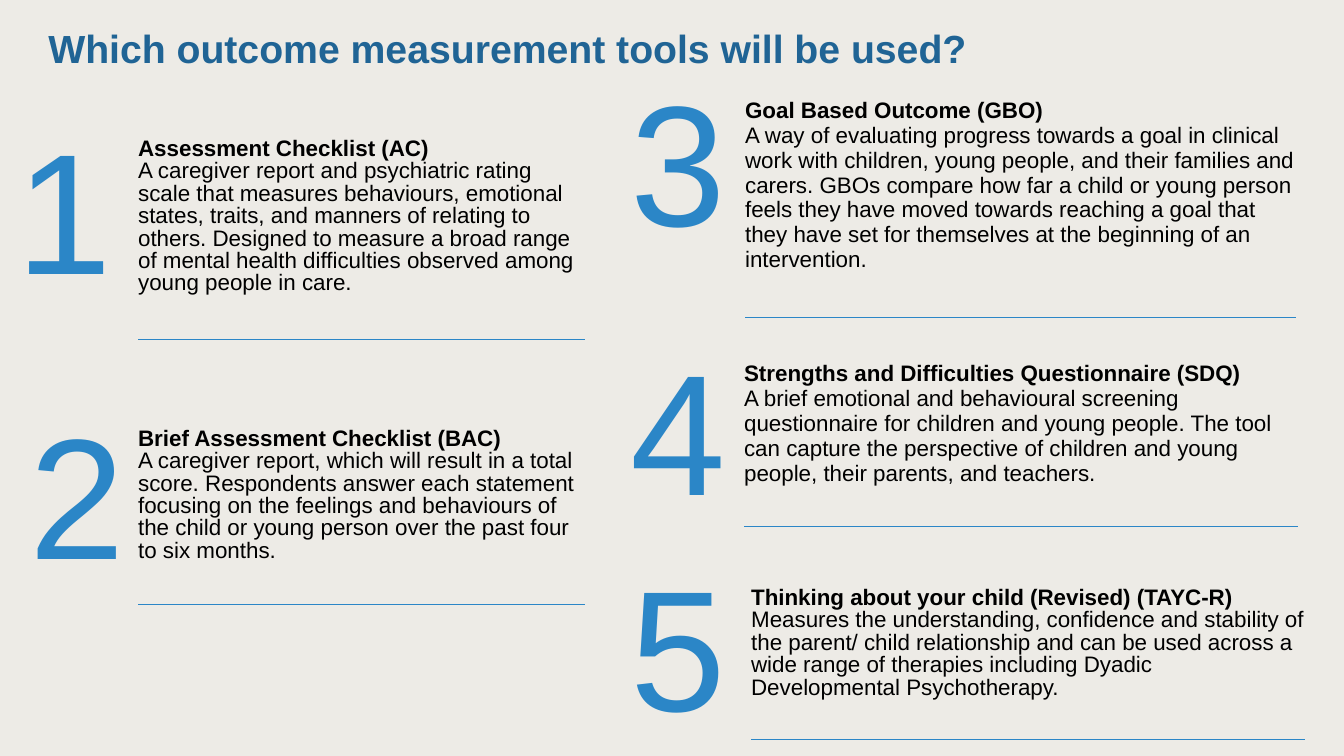
import pptx
import pptx.util
import pptx.dml.color
import pptx.oxml
import pptx.oxml.ns
from lxml import etree

COLORS = {"background": "EDEBE6", "title": "206495", "accent": "2B86C7", "body": "000000"}
FONT = "Arial"
SLIDE_W, SLIDE_H = 13.33, 7.5
NUMBER_W, NUMBER_H = 1.02, 1.42
LEFT_W, RIGHT_W = 4.43, 5.49  # widths of the two columns of tools
SPACER_H = 0.84  # empty row under each rule

# number, number position, table position, table width, text row height,
# heading and body line spacing, heading, body
TOOLS = [
    ("1", (0.07, 1.2), (1.37, 1.25), LEFT_W, 2.0, (1.0, 0.9),
     "Assessment Checklist (AC)",
     "A caregiver report and psychiatric rating scale that measures behaviours, "
     "emotional states, traits, and manners of relating to others. Designed to "
     "measure a broad range of mental health difficulties observed among young "
     "people in care."),
    ("2", (0.19, 4.03), (1.37, 4.15), LEFT_W, 1.75, (0.9, 0.9),
     "Brief Assessment Checklist (BAC)",
     "A caregiver report, which will result in a total score. Respondents answer "
     "each statement focusing on the feelings and behaviours of the child or young "
     "person over the past four to six months."),
    ("3", (6.15, 0.73), (7.39, 0.9), 5.46, 2.12, (0.9, 1.0),
     "Goal Based Outcome (GBO)",
     "A way of evaluating progress towards a goal in clinical work with children, "
     "young people, and their families and carers. GBOs compare how far a child or "
     "young person feels they have moved towards reaching a goal that they have set "
     "for themselves at the beginning of an intervention."),
    ("4", (6.15, 3.4), (7.38, 3.51), RIGHT_W, 1.62, (0.9, 1.0),
     "Strengths and Difficulties Questionnaire (SDQ)",
     "A brief emotional and behavioural screening questionnaire for children and "
     "young people. The tool can capture the perspective of children and young "
     "people, their parents, and teachers."),
    ("5", (6.15, 5.54), (7.45, 5.73), RIGHT_W, 1.55, (0.9, 0.9),
     "Thinking about your child (Revised) (TAYC-R)",
     "Measures the understanding, confidence and stability of the parent/ child "
     "relationship and can be used across a wide range of therapies including "
     "Dyadic Developmental Psychotherapy."),
]


def inches(*lengths):
    return [pptx.util.Inches(length) for length in lengths]


def rgb(name):
    return pptx.dml.color.RGBColor.from_string(COLORS[name])


def write(paragraph, text, size, color, bold=False, spacing=1.0, before=0):
    paragraph.text = text
    paragraph.line_spacing = spacing
    paragraph.space_before = pptx.util.Pt(before)
    font = paragraph.runs[0].font
    font.name, font.size, font.bold = FONT, pptx.util.Pt(size), bold
    font.color.rgb = rgb(color)


def add_label(slide, box, text, size, color, inset=None, **style):
    frame = slide.shapes.add_textbox(*inches(*box)).text_frame
    frame.word_wrap = True
    if inset is not None:
        frame.margin_left = frame.margin_right = pptx.util.Inches(inset)
        frame.margin_top = frame.margin_bottom = pptx.util.Inches(inset)
    write(frame.paragraphs[0], text, size, color, **style)


def set_borders(cell, ruled_side):
    """Rule one side of the cell and leave the others clear."""
    cell.fill.background()
    properties = cell._tc.get_or_add_tcPr()
    for position, side in enumerate(("lnL", "lnR", "lnT", "lnB")):
        line = etree.Element(pptx.oxml.ns.qn("a:" + side), w=str(pptx.util.Pt(1)))
        if side == ruled_side:
            fill = etree.SubElement(line, pptx.oxml.ns.qn("a:solidFill"))
            etree.SubElement(fill, pptx.oxml.ns.qn("a:srgbClr"), val=COLORS["accent"])
        else:
            etree.SubElement(line, pptx.oxml.ns.qn("a:noFill"))
        properties.insert(position, line)


def add_description(slide, corner, width, text_h, spacings, heading, body):
    box = inches(*corner, width, text_h + SPACER_H)
    table = slide.shapes.add_table(2, 1, *box).table
    table.first_row = table.horz_banding = False
    for row, height in zip(table.rows, (text_h, SPACER_H)):
        row.height = pptx.util.Inches(height)
    description, spacer = table.cell(0, 0), table.cell(1, 0)
    set_borders(description, "lnB")
    set_borders(spacer, "lnT")

    description.margin_left = description.margin_right = 0
    description.margin_top, description.margin_bottom = inches(0.1, 0.31)
    frame = description.text_frame
    write(frame.paragraphs[0], heading, 16, "body", bold=True, spacing=spacings[0])
    write(frame.add_paragraph(), body, 16, "body", spacing=spacings[1])


def main():
    deck = pptx.Presentation()
    deck.slide_width, deck.slide_height = inches(SLIDE_W, SLIDE_H)
    slide = deck.slides.add_slide(deck.slide_layouts[6])
    slide.background.fill.solid()
    slide.background.fill.fore_color.rgb = rgb("background")

    # Numbered tools, each with its description
    for number, number_corner, corner, width, text_h, spacings, heading, body in TOOLS:
        add_label(slide, (*number_corner, NUMBER_W, NUMBER_H), number, 122.6, "accent",
                  spacing=0.9, before=7.5)
        add_description(slide, corner, width, text_h, spacings, heading, body)

    # Title
    add_label(slide, (0.48, 0.33, 11.66, 0.6),
              "Which outcome measurement tools will be used?", 28, "title",
              inset=0, bold=True, spacing=0.8)

    deck.save("out.pptx")


if __name__ == "__main__":
    main()
